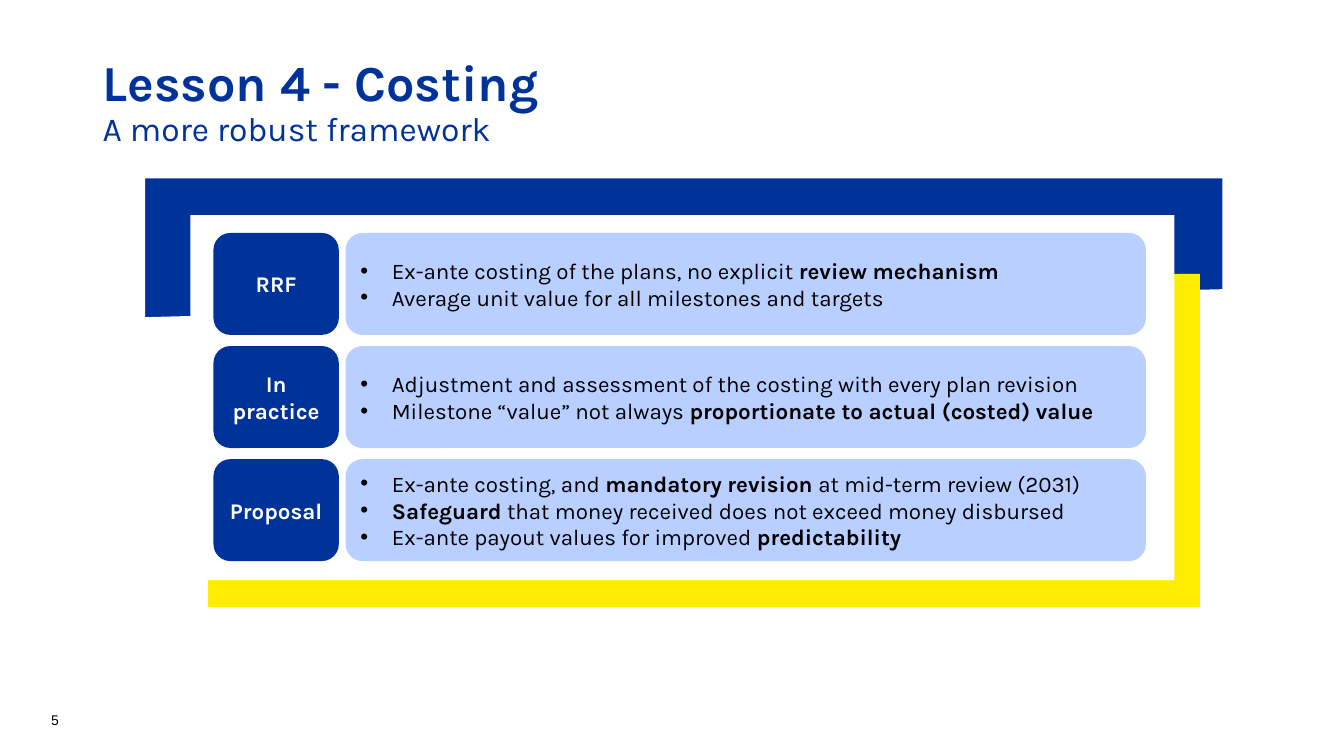
from lxml.etree import SubElement
from pptx import Presentation
from pptx.dml.color import RGBColor
from pptx.enum.shapes import MSO_SHAPE
from pptx.enum.text import MSO_ANCHOR, PP_ALIGN
from pptx.oxml.ns import qn
from pptx.util import Cm, Pt

BLUE, PALE_BLUE, YELLOW, WHITE, BLACK = "003399", "B8CFFF", "FFED00", "FFFFFF", "000000"


def add_block(slide, kind, left, top, width, height, fill):
    shape = slide.shapes.add_shape(kind, Cm(left), Cm(top), Cm(width), Cm(height))
    shape.shadow.inherit = False
    shape.fill.solid()
    shape.fill.fore_color.rgb = RGBColor.from_string(fill)
    shape.line.fill.background()
    shape.text_frame.word_wrap = True
    shape.text_frame.vertical_anchor = MSO_ANCHOR.MIDDLE
    return shape


def format_run(run, size, color, bold=False, name="Karla"):
    run.font.name = name
    run.font.size = Pt(size)
    run.font.bold = bold
    run.font.color.rgb = RGBColor.from_string(color)


presentation = Presentation()
presentation.slide_width = Cm(33.87)
presentation.slide_height = Cm(19.05)
slide = presentation.slides.add_slide(presentation.slide_layouts[6])

title = slide.shapes.add_textbox(Cm(2.34), Cm(1.47), Cm(30.23), Cm(2.26))
title.text_frame.word_wrap = True
title.text_frame.vertical_anchor = MSO_ANCHOR.MIDDLE
paragraph = title.text_frame.paragraphs[0]
paragraph.text = "Lesson 4 - Costing\vA more robust framework"
paragraph.line_spacing = 0.9
heading, subtitle = paragraph.runs
format_run(heading, 36, BLUE, bold=True)
format_run(subtitle, 24, BLUE)

page_number = slide.shapes.add_textbox(Cm(1.04), Cm(17.45), Cm(7.62), Cm(1.02))
page_number.text_frame.word_wrap = True
page_number.text_frame.vertical_anchor = MSO_ANCHOR.BOTTOM
page_number.text_frame.text = "5"
format_run(page_number.text_frame.paragraphs[0].runs[0], 10, BLACK, name="Arial")

blue_frame = add_block(slide, MSO_SHAPE.FLOWCHART_MANUAL_INPUT, 3.64, 4.48, 27.18, 3.53, BLUE)
blue_frame.rotation = 180
blue_frame.line.color.rgb = RGBColor.from_string(WHITE)
blue_frame.line.width = Pt(1)
add_block(slide, MSO_SHAPE.RECTANGLE, 5.24, 6.9, 25, 8.4, YELLOW)
add_block(slide, MSO_SHAPE.RECTANGLE, 4.8, 5.42, 24.8, 9.2, WHITE)

rows = [
    ("RRF", [
        [("Ex-ante costing of the plans, no explicit ", False), ("review mechanism", True)],
        [("Average unit value for all milestones and targets", False)],
    ]),
    ("In practice", [
        [("Adjustment and assessment of the costing with every plan revision", False)],
        [("Milestone “value” not always ", False),
         ("proportionate to actual (costed) value", True)],
    ]),
    ("Proposal", [
        [("Ex-ante costing, and ", False), ("mandatory revision ", True),
         ("at mid-term review (2031)", False)],
        [("Safeguard", True), (" that money received does not exceed money disbursed", False)],
        [("Ex-ante payout values for improved ", False), ("predictability", True)],
    ]),
]
first_top, row_pitch, row_height = 5.87, 2.85, 2.57

for index, (label, points) in enumerate(rows):
    top = first_top + index * row_pitch

    panel = add_block(slide, MSO_SHAPE.ROUNDED_RECTANGLE, 8.71, top, 20.17, row_height, PALE_BLUE)
    for number, point in enumerate(points):
        frame = panel.text_frame
        paragraph = frame.add_paragraph() if number else frame.paragraphs[0]
        paragraph.alignment = PP_ALIGN.LEFT
        properties = paragraph._p.get_or_add_pPr()
        properties.set("marL", str(Cm(0.79)))
        properties.set("indent", str(Cm(-0.79)))
        bullet_color = SubElement(properties, qn("a:buClr"))
        SubElement(bullet_color, qn("a:srgbClr"), val=BLACK)
        SubElement(properties, qn("a:buFont"), typeface="Arial")
        SubElement(properties, qn("a:buChar"), char="•")
        for text, bold in point:
            run = paragraph.add_run()
            run.text = text
            format_run(run, 16, BLACK, bold)

    tab = add_block(slide, MSO_SHAPE.ROUNDED_RECTANGLE, 5.38, top, 3.16, row_height, BLUE)
    tab.text_frame.text = label
    paragraph = tab.text_frame.paragraphs[0]
    paragraph.alignment = PP_ALIGN.CENTER
    format_run(paragraph.runs[0], 16, WHITE, bold=True)

presentation.save("out.pptx")
